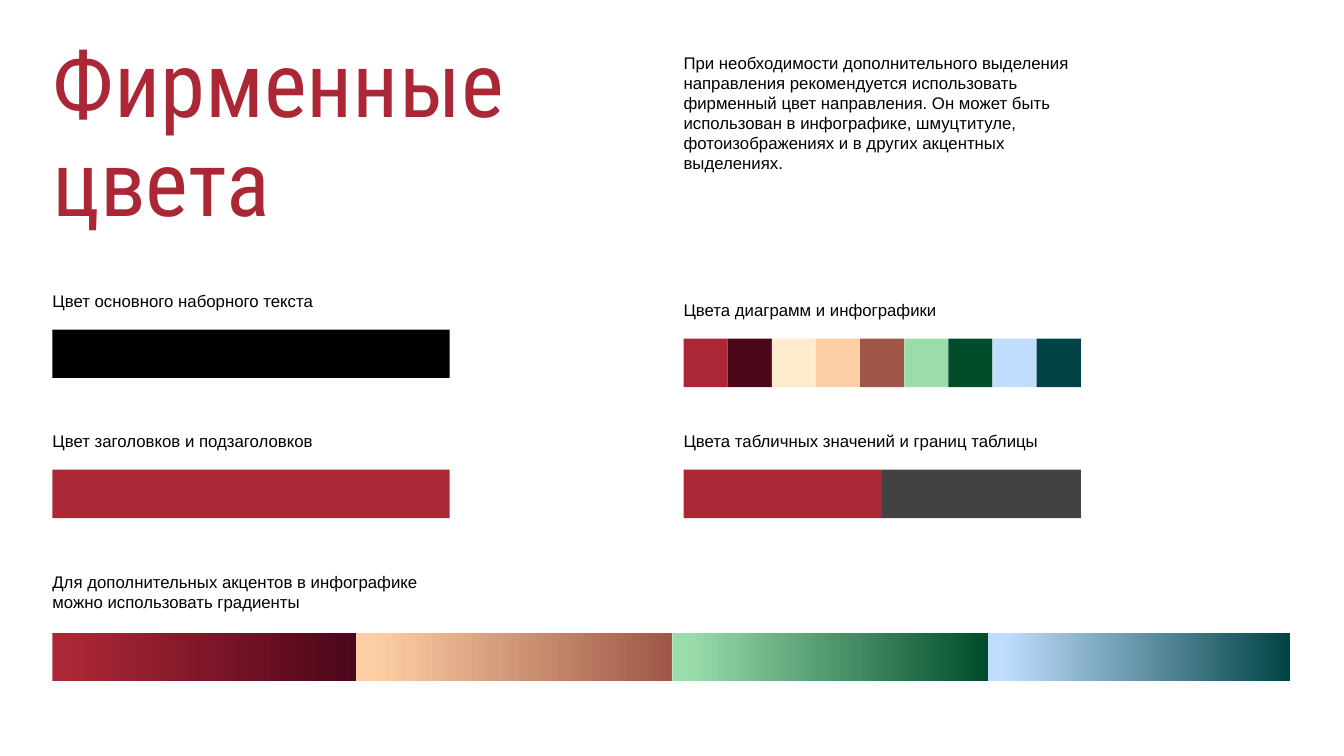
import pptx
import pptx.dml.color
import pptx.enum.text
import pptx.util

HUES = {
    "black": "000000", "red": "AB2735", "wine": "4C061A",
    "cream": "FFECCE", "peach": "FECFA5", "brown": "9E5746",
    "mint": "9ADCAA", "green": "004C2B", "sky": "C0DDFF",
    "teal": "004346", "grey": "424242",
}
LEFT, RIGHT = 0.52, 6.78
BAND, SHORT = 3.94, 3
TALL, LIFT = 0.48, 0.39
ROWS = (3.27, 4.66, 6.28)
CHART = ("red", "wine", "cream", "peach", "brown", "mint", "green", "sky", "teal")
BLENDS = (("red", "wine"), ("peach", "brown"), ("mint", "green"), ("sky", "teal"))


def hue(name):
    """Return the named colour."""
    return pptx.dml.color.RGBColor.from_string(HUES[name])


def place(shape, *box):
    """Set a shape's left, top, width and height in inches."""
    shape.left, shape.top, shape.width, shape.height = map(pptx.util.Inches, box)


def clear(frame):
    """Give a text frame no margins, wrapping and a top anchor."""
    frame.margin_left = frame.margin_right = 0
    frame.margin_top = frame.margin_bottom = 0
    frame.word_wrap = True
    frame.auto_size = pptx.enum.text.MSO_AUTO_SIZE.NONE
    frame.vertical_anchor = pptx.enum.text.MSO_ANCHOR.TOP


def add_run(para, text, size, face, tint):
    """Add one formatted run to a paragraph."""
    run = para.add_run()
    run.text = text
    run.font.size = pptx.util.Pt(size)
    run.font.name = face
    run.font.color.rgb = hue(tint)


def add_head(slide, lines):
    """Fill the title placeholder, one run to a line."""
    head = slide.shapes.title
    place(head, LEFT, 0.39, 6.02, 1.97)
    clear(head.text_frame)
    para = head.text_frame.paragraphs[0]
    para.alignment = pptx.enum.text.PP_ALIGN.LEFT
    para.line_spacing = 0.9
    for rank, line in enumerate(lines):
        if rank:
            para.add_line_break()
        add_run(para, line, 65, "Roboto Condensed", "red")


def add_note(slide, text, left, top, width, height=0.2):
    """Add a small text box."""
    note = slide.shapes.add_textbox(0, 0, 0, 0)
    place(note, left, top, width, height)
    clear(note.text_frame)
    add_run(note.text_frame.paragraphs[0], text, 12, "Arial", "black")


def paint(fill, tints):
    """Apply a solid fill for one tint or a gradient for two."""
    if len(tints) == 1:
        fill.solid()
        fill.fore_color.rgb = hue(tints[0])
        return
    fill.gradient()
    fill.gradient_angle = 0
    for stop, tint, spot in zip(fill.gradient_stops, tints, (0.05, 1)):
        stop.color.rgb = hue(tint)
        stop.position = spot


def add_strip(slide, left, top, widths, fills):
    """Lay swatches side by side."""
    for width, tints in zip(widths, fills):
        kind = pptx.enum.shapes.MSO_SHAPE.RECTANGLE
        swatch = slide.shapes.add_shape(kind, 0, 0, 0, 0)
        place(swatch, left, top, width, TALL)
        swatch.shadow.inherit = False
        swatch.line.fill.background()
        paint(swatch.fill, tints)
        left += width


def add_group(slide, text, left, top, width, names):
    """Add a label above a band of equal swatches."""
    add_note(slide, text, left, top - LIFT, width)
    count = len(names)
    add_strip(slide, left, top, [BAND / count] * count, [(name,) for name in names])


def main():
    """Build the slide and save it."""
    deck = pptx.Presentation()
    deck.slide_width = pptx.util.Inches(13.33)
    deck.slide_height = pptx.util.Inches(7.5)
    slide = deck.slides.add_slide(deck.slide_layouts[5])
    add_head(slide, ("Фирменные", "цвета"))
    add_note(
        slide,
        "При необходимости дополнительного выделения направления рекомендуется "
        "использовать фирменный цвет направления. Он может быть использован в "
        "инфографике, шмуцтитуле, фотоизображениях и в других акцентных выделениях.",
        RIGHT, 0.52, BAND, 1.36,
    )
    for group in (
        ("Цвет основного наборного текста", LEFT, ROWS[0], SHORT, ("black",)),
        ("Цвет заголовков и подзаголовков", LEFT, ROWS[1], SHORT, ("red",)),
        ("Цвета диаграмм и инфографики", RIGHT, ROWS[0] + 0.09, SHORT, CHART),
        ("Цвета табличных значений и границ таблицы", RIGHT, ROWS[1], BAND, ("red", "grey")),
    ):
        add_group(slide, *group)
    add_note(
        slide,
        "Для дополнительных акцентов в инфографике можно использовать градиенты",
        LEFT, 5.67, BAND, 0.39,
    )
    add_strip(slide, LEFT, ROWS[2], (3.01, 3.14, 3.13, 3), BLENDS)
    deck.save("out.pptx")


if __name__ == "__main__":
    main()
